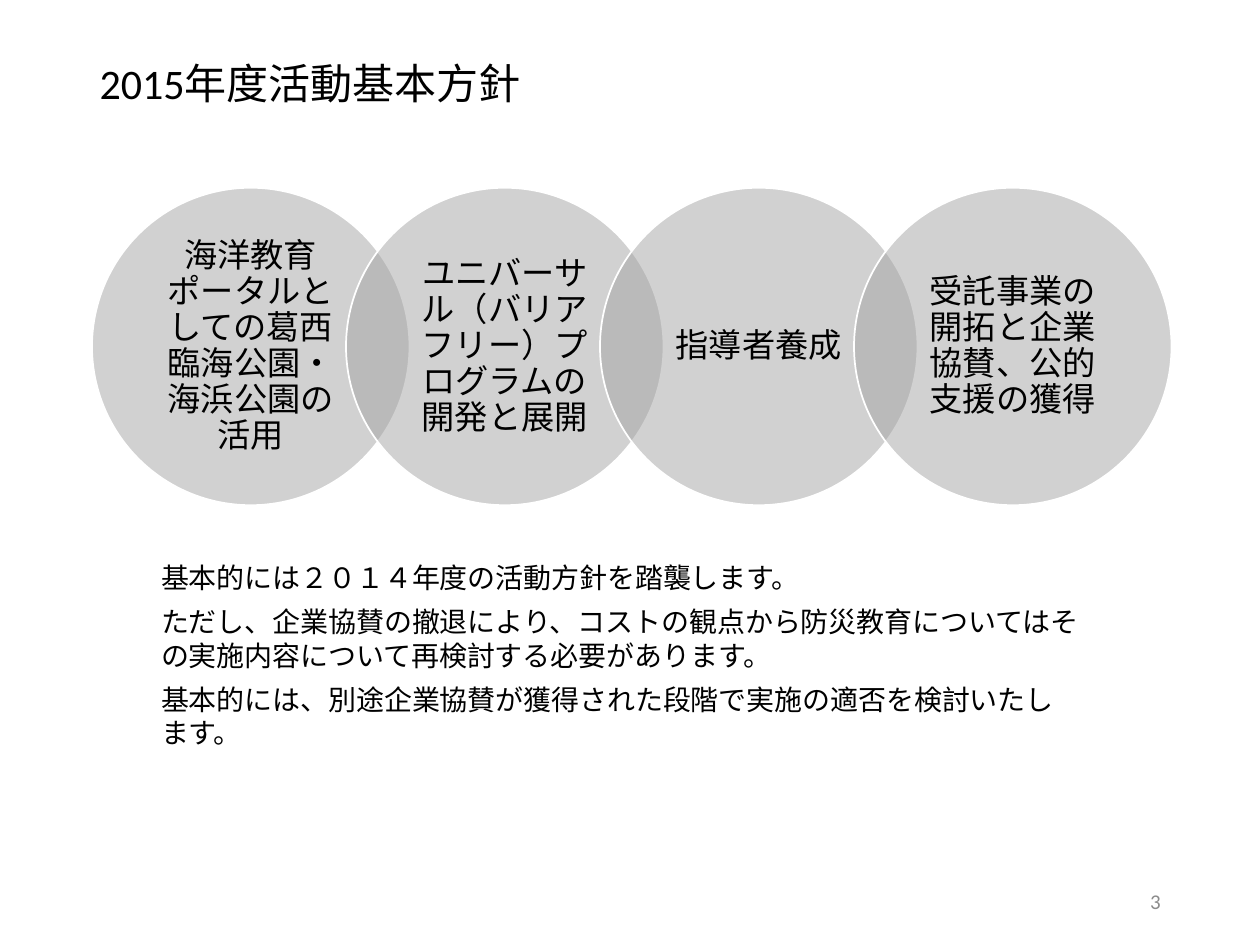
from lxml.etree import SubElement
from pptx import Presentation
from pptx.dml.color import RGBColor
from pptx.enum.shapes import MSO_SHAPE
from pptx.enum.text import MSO_ANCHOR, PP_ALIGN
from pptx.oxml.ns import qn
from pptx.util import Inches, Pt

COLORS = {"text": "000000", "number": "8C8C8C", "circle": "A5A5A5", "outline": "FFFFFF"}
FONT = "Calibri"

POLICIES = [
    "海洋教育ポータルとしての葛西臨海公園・海浜公園の活用",
    "ユニバーサル（バリアフリー）プログラムの開発と展開",
    "指導者養成",
    "受託事業の開拓と企業協賛、公的支援の獲得",
]
REMARKS = [
    "基本的には２０１４年度の活動方針を踏襲します。",
    "ただし、企業協賛の撤退により、コストの観点から防災教育についてはその実施内容について再検討する必要があります。",
    "基本的には、別途企業協賛が獲得された段階で実施の適否を検討いたします。",
]


class PolicySlide:
    def __init__(self, presentation):
        self.slide = presentation.slides.add_slide(presentation.slide_layouts[5])

    def color(self, name):
        return RGBColor.from_string(COLORS[name])

    def fill_text(self, frame, lines, size, align=PP_ALIGN.LEFT, anchor=MSO_ANCHOR.TOP,
                  color="text", spacing=1.0, after=0):
        frame.word_wrap = True
        frame.vertical_anchor = anchor
        for index, line in enumerate(lines):
            paragraph = frame.add_paragraph() if index else frame.paragraphs[0]
            paragraph.alignment = align
            paragraph.line_spacing = spacing
            paragraph.space_before = Pt(0)
            paragraph.space_after = Pt(after)
            run = paragraph.add_run()
            run.text = line
            run.font.size = Pt(size)
            run.font.name = FONT
            run.font.color.rgb = self.color(color)

    def title(self, text, left, top, width, height):
        heading = self.slide.shapes.title
        heading.left, heading.top = Inches(left), Inches(top)
        heading.width, heading.height = Inches(width), Inches(height)
        self.fill_text(heading.text_frame, [text], 24, anchor=MSO_ANCHOR.MIDDLE, spacing=0.9)

    def text(self, lines, left, top, width, height, size, **style):
        box = self.slide.shapes.add_textbox(
            Inches(left), Inches(top), Inches(width), Inches(height))
        self.fill_text(box.text_frame, lines, size, **style)

    def circle(self, label, left, top, diameter):
        circle = self.slide.shapes.add_shape(
            MSO_SHAPE.OVAL, Inches(left), Inches(top), Inches(diameter), Inches(diameter))
        circle.shadow.inherit = False
        circle.fill.solid()
        circle.fill.fore_color.rgb = self.color("circle")
        tint = circle._element.spPr.find(qn("a:solidFill"))[0]
        SubElement(tint, qn("a:alpha")).set("val", "50000")
        circle.line.color.rgb = self.color("outline")
        circle.line.width = Pt(1)
        frame = circle.text_frame
        frame.margin_left = frame.margin_right = Inches(0.14)
        frame.margin_top = frame.margin_bottom = Inches(0.03)
        self.fill_text(frame, [label], 19, align=PP_ALIGN.CENTER,
                       anchor=MSO_ANCHOR.MIDDLE, spacing=0.9, after=6.65)


def main():
    presentation = Presentation()
    presentation.slide_width = Inches(10)
    presentation.slide_height = Inches(7.5)
    page = PolicySlide(presentation)
    page.title("2015年度活動基本方針", 0.69, 0.13, 8.62, 1.1)

    diameter = 2.52
    step = diameter * 0.8
    for index, policy in enumerate(POLICIES):
        page.circle(policy, 0.73 + index * step, 1.49, diameter)

    page.text(REMARKS, 1.18, 4.4, 7.5, 1.35, 16, after=6)
    page.text(["3"], 7.06, 6.95, 2.25, 0.4, 12, align=PP_ALIGN.RIGHT,
              anchor=MSO_ANCHOR.MIDDLE, color="number")
    presentation.save("out.pptx")


if __name__ == "__main__":
    main()
